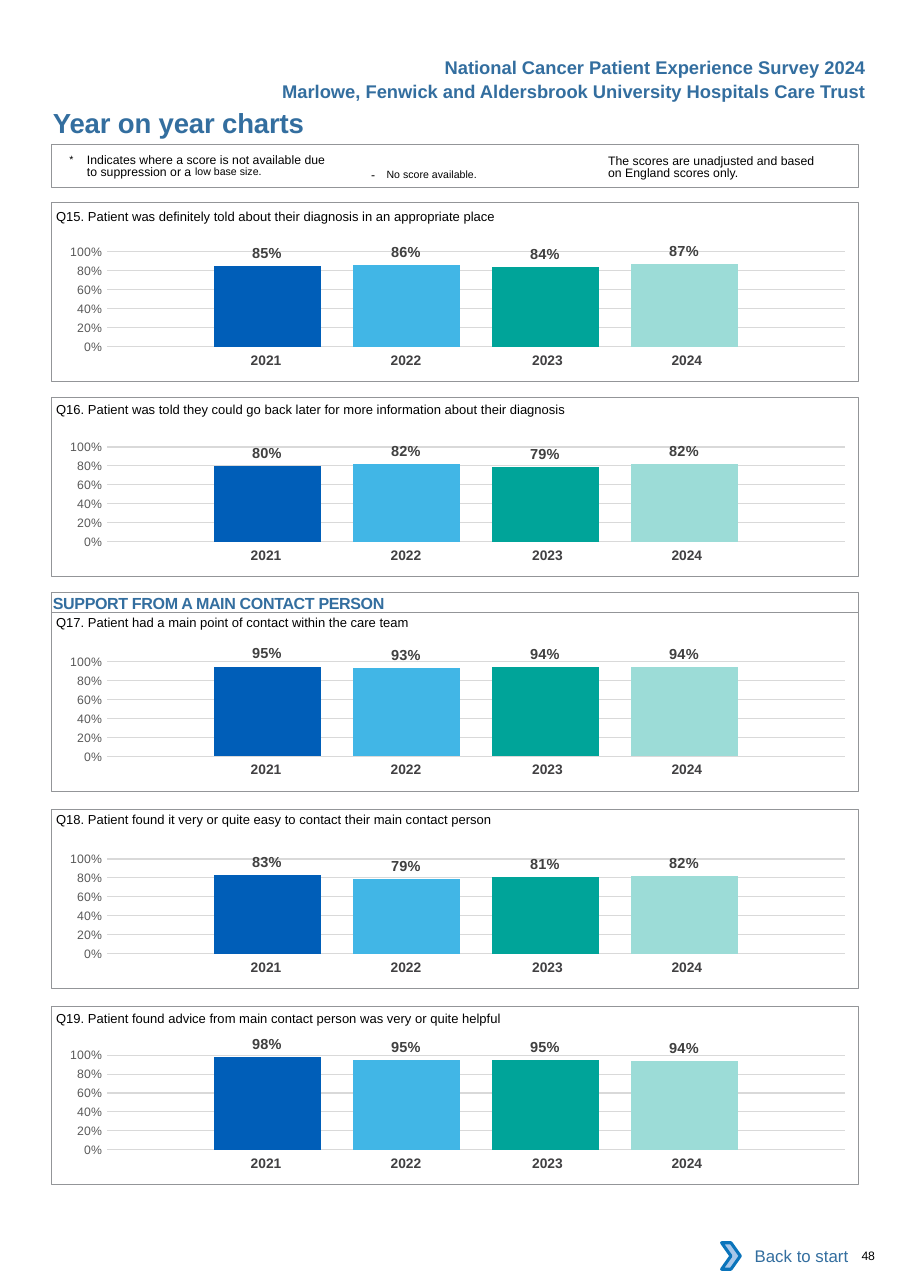
import pptx
import pptx.chart.data
import pptx.dml.color
import pptx.enum.chart
import pptx.enum.shapes
import pptx.enum.text
import pptx.oxml
import pptx.util

Inches = pptx.util.Inches
Pt = pptx.util.Pt
RGB = pptx.dml.color.RGBColor
SHAPE = pptx.enum.shapes.MSO_SHAPE
ALIGN = pptx.enum.text.PP_ALIGN
ANCHOR = pptx.enum.text.MSO_ANCHOR

BLACK = RGB(0x00, 0x00, 0x00)
WHITE = RGB(0xFF, 0xFF, 0xFF)
HEADING = RGB(0x33, 0x6E, 0x9F)
BORDER = RGB(0x93, 0x95, 0x98)
YEAR_TEXT = RGB(0x41, 0x40, 0x42)
LABEL_TEXT = RGB(0x40, 0x40, 0x40)
AXIS_TEXT = RGB(0x59, 0x59, 0x59)
GRID = RGB(0xD9, 0xD9, 0xD9)
CHEVRON_FILL = RGB(0xA8, 0xC7, 0xE9)
CHEVRON_LINE = RGB(0x0A, 0x74, 0xBB)
BAR_COLORS = [RGB(0x00, 0x5E, 0xB8), RGB(0x41, 0xB6, 0xE6),
              RGB(0x00, 0xA4, 0x99), RGB(0x9C, 0xDC, 0xD7)]

LEFT, WIDTH, PANEL_HEIGHT = 0.47, 7.32, 1.62
YEARS = ["2021", "2022", "2023", "2024"]
YEAR_WIDTHS = [1.27, 1.27, 1.34, 1.27]
YEAR_RIGHT_INSETS = [0, 0, 0.04, 0.12]
NO_TABLE_STYLE = "{2D5ABB26-0587-4C30-8999-92F81FD0307C}"

# Panel top, question top, question, scores by year
PANELS = [
    (1.84, 1.80, "Q15. Patient was definitely told about their diagnosis in an appropriate place",
     (0.85, 0.86, 0.84, 0.87)),
    (3.61, 3.55, "Q16. Patient was told they could go back later for more information about their diagnosis",
     (0.80, 0.82, 0.79, 0.82)),
    (5.56, 5.49, "Q17. Patient had a main point of contact within the care team",
     (0.95, 0.93, 0.94, 0.94)),
    (7.35, 7.28, "Q18. Patient found it very or quite easy to contact their main contact person",
     (0.83, 0.79, 0.81, 0.82)),
    (9.13, 9.08, "Q19. Patient found advice from main contact person was very or quite helpful",
     (0.98, 0.95, 0.95, 0.94)),
]


def set_font(font, size, color, bold=False):
    font.name, font.size, font.bold = "Arial", Pt(size), bold
    font.color.rgb = color


def add_run(p, text, size, color=BLACK, bold=False, spacing=0, baseline=0):
    r = p.add_run()
    r.text = text
    set_font(r.font, size, color, bold)
    if spacing:
        r.font._element.set("spc", str(round(spacing * 100)))
    if baseline:
        r.font._element.set("baseline", str(baseline * 1000))


def set_margins(tf, left=0, top=0, right=0, bottom=0):
    tf.margin_left, tf.margin_top = Inches(left), Inches(top)
    tf.margin_right, tf.margin_bottom = Inches(right), Inches(bottom)


def add_text(s, x, y, w, h, margins=(0, 0, 0, 0), wrap=True):
    tf = s.shapes.add_textbox(Inches(x), Inches(y), Inches(w), Inches(h)).text_frame
    tf.word_wrap = wrap
    set_margins(tf, *margins)
    return tf.paragraphs[0]


def add_box(s, kind, x, y, w, h, fill=None, line=None, weight=0.5):
    sp = s.shapes.add_shape(kind, Inches(x), Inches(y), Inches(w), Inches(h))
    sp.shadow.inherit = False
    if fill is None:
        sp.fill.background()
    else:
        sp.fill.solid()
        sp.fill.fore_color.rgb = fill
    if line is None:
        sp.line.fill.background()
    else:
        sp.line.color.rgb, sp.line.width = line, Pt(weight)
    return sp


def add_header(s):
    for y, text in ((0.68, "Marlowe, Fenwick and Aldersbrook University Hospitals Care Trust"),
                    (0.46, "National Cancer Patient Experience Survey 2024")):
        p = add_text(s, 2.36, y, 5.6, 0.3, (0.1, 0.05, 0.1, 0.05))
        p.alignment = ALIGN.RIGHT
        add_run(p, text, 12, HEADING, True)

    title = s.shapes.title
    title.left, title.top = Inches(LEFT), Inches(0.96)
    title.width, title.height = Inches(4.5), Inches(0.3)
    tf = title.text_frame
    tf.auto_size = pptx.enum.text.MSO_AUTO_SIZE.NONE
    tf.vertical_anchor = ANCHOR.TOP
    set_margins(tf, left=0.01)
    tf.paragraphs[0].alignment = ALIGN.LEFT
    add_run(tf.paragraphs[0], "Year on year charts", 18, HEADING, True, -0.1)


def add_legend(s, x, y):
    add_box(s, SHAPE.RECTANGLE, x, y, WIDTH, 0.39, line=BORDER, weight=0.75)

    # Suppressed scores, with a hanging indent after the asterisk
    p = add_text(s, x + 0.16, y + 0.07, 2.4, 0.27, (0, 0.03, 0, 0))
    p.line_spacing = Pt(8.1)
    pPr = p._p.get_or_add_pPr()
    pPr.set("marL", str(Inches(0.16)))
    pPr.set("indent", str(-Inches(0.16)))
    add_run(p, "*\t", 12, baseline=3)
    add_run(p, "Indicates where a score is not available due to suppression or a ", 8)
    add_run(p, "low base size.", 12, baseline=7)

    # Missing scores
    p = add_text(s, x + 2.8, y + 0.1, 1.83, 0.24, (0.1, 0.05, 0.1, 0.05))
    add_run(p, "- ", 8, spacing=2.6)
    add_run(p, "No score available.", 12, baseline=3)

    # Basis of the scores
    p = add_text(s, x + 5.05, y + 0.07, 2.01, 0.27, (0, 0.03, 0, 0))
    p.line_spacing = Pt(8.1)
    add_run(p, "The scores are unadjusted and based on England scores only.", 8)


def add_years(s, x, y):
    frame = s.shapes.add_table(1, len(YEARS), Inches(x), Inches(y),
                               Inches(sum(YEAR_WIDTHS)), Inches(0.27))
    table = frame.table
    table.first_row = table.horz_banding = False
    table._tbl.tblPr.find(pptx.oxml.ns.qn("a:tableStyleId")).text = NO_TABLE_STYLE
    table.rows[0].height = Inches(0.27)
    for i, year in enumerate(YEARS):
        table.columns[i].width = Inches(YEAR_WIDTHS[i])
        cell = table.cell(0, i)
        cell.fill.background()
        set_margins(cell, 0.1, 0.05, YEAR_RIGHT_INSETS[i], 0.05)
        p = cell.text_frame.paragraphs[0]
        p.alignment = ALIGN.CENTER
        add_run(p, year, 9, YEAR_TEXT, True)


def add_scores(s, x, y, scores):
    data = pptx.chart.data.CategoryChartData(number_format="0%")
    data.categories = ["1"]
    for i, score in enumerate(scores, 1):
        data.add_series(f"Series {i}", [score])
    chart = s.shapes.add_chart(pptx.enum.chart.XL_CHART_TYPE.COLUMN_CLUSTERED, Inches(x),
                               Inches(y), Inches(WIDTH), Inches(1.29), data).chart
    chart.has_legend = chart.has_title = False
    chart.font.name, chart.font.size = "Calibri", Pt(10)
    chart.font.color.rgb = BLACK
    chart.category_axis.visible = False

    axis = chart.value_axis
    axis.minimum_scale, axis.maximum_scale, axis.major_unit = 0, 1, 0.2
    axis.major_tick_mark = pptx.enum.chart.XL_TICK_MARK.NONE
    axis.format.line.fill.background()
    axis.major_gridlines.format.line.color.rgb = GRID
    axis.major_gridlines.format.line.width = Pt(0.75)
    set_font(axis.tick_labels.font, 8, AXIS_TEXT)
    axis.tick_labels.number_format = "0%"
    axis.tick_labels.number_format_is_linked = False

    plot = chart.plots[0]
    plot.vary_by_categories = False
    plot.gap_width, plot.overlap = 200, -30
    for series, color in zip(plot.series, BAR_COLORS):
        series.format.fill.solid()
        series.format.fill.fore_color.rgb = color
        labels = series.data_labels
        labels.show_value = True
        labels.position = pptx.enum.chart.XL_LABEL_POSITION.OUTSIDE_END
        labels.number_format, labels.number_format_is_linked = "0%", False
        set_font(labels.font, 9.5, LABEL_TEXT, True)

    # Fixed inner plot area
    area = chart._chartSpace.chart.plotArea
    for old in area.findall(pptx.oxml.ns.qn("c:layout")):
        area.remove(old)
    area.insert(0, pptx.oxml.parse_xml(
        f'<c:layout {pptx.oxml.ns.nsdecls("c")}><c:manualLayout>'
        '<c:layoutTarget val="inner"/><c:xMode val="edge"/><c:yMode val="edge"/>'
        '<c:x val="0.079"/><c:y val="0.145"/><c:w val="0.915"/><c:h val="0.666"/>'
        '</c:manualLayout></c:layout>'))


def add_panel(s, x, y, question_top, question, scores):
    add_years(s, x + 1.26, y + 1.31)
    add_scores(s, x - 0.08, y + 0.26, scores)
    add_box(s, SHAPE.RECTANGLE, x, y, WIDTH, PANEL_HEIGHT, line=BORDER)
    p = add_text(s, x + 0.04, question_top, 6, 0.24, (0, 0.09, 0, 0))
    add_run(p, question, 8.5)


def add_section(s, x, y, text):
    sp = add_box(s, SHAPE.RECTANGLE, x, y, WIDTH, 0.18, line=BORDER)
    sp.text_frame.vertical_anchor = ANCHOR.TOP
    set_margins(sp.text_frame, 0.01, 0.01)
    p = sp.text_frame.paragraphs[0]
    p.alignment = ALIGN.LEFT
    add_run(p, text, 10.5, HEADING, True, -0.2)


def add_footer(s, x, y):
    sp = add_box(s, SHAPE.RECTANGLE, x + 0.07, y, 1.18, 0.42, WHITE)
    sp.text_frame.vertical_anchor = ANCHOR.MIDDLE
    p = sp.text_frame.paragraphs[0]
    p.alignment = ALIGN.RIGHT
    add_run(p, "Back to start", 11, HEADING)
    add_box(s, SHAPE.CHEVRON, x, y + 0.09, 0.17, 0.24, CHEVRON_FILL, CHEVRON_LINE, 2)
    add_run(add_text(s, x + 1.27, y + 0.14, 0.41, 0.13), "48", 8, spacing=-0.2)


def main():
    prs = pptx.Presentation()
    prs.slide_width, prs.slide_height = Inches(8.26), Inches(11.69)
    s = prs.slides.add_slide(prs.slide_layouts[5])
    add_header(s)
    add_legend(s, LEFT, 1.31)
    for panel in PANELS:
        add_panel(s, LEFT, *panel)
    add_section(s, LEFT, 5.38, "SUPPORT FROM A MAIN CONTACT PERSON")
    add_footer(s, 6.55, 11.19)
    prs.save("out.pptx")


if __name__ == "__main__":
    main()
